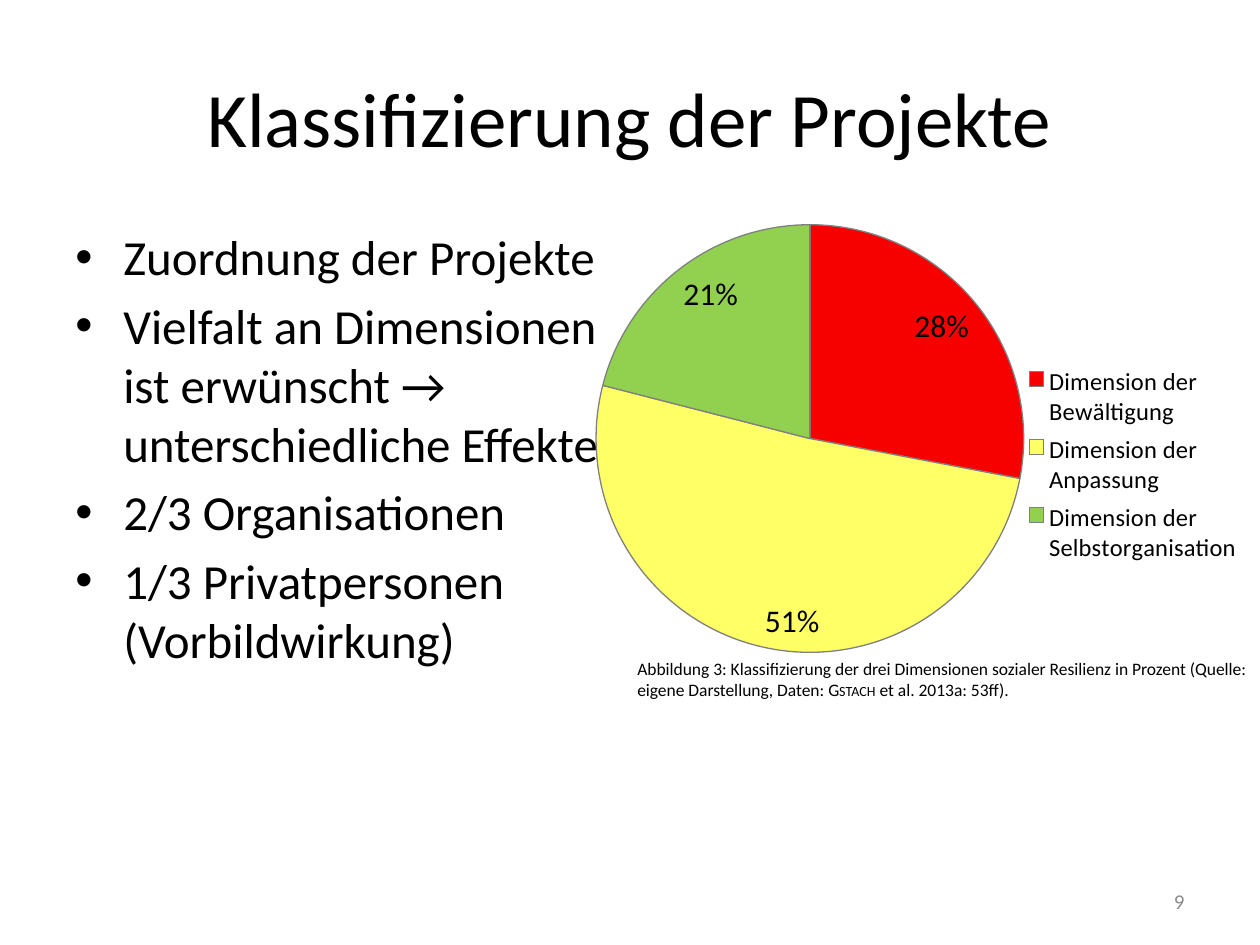
import pptx
import pptx.chart.data
import pptx.dml.color
import pptx.enum.chart
import pptx.enum.text
import pptx.oxml
import pptx.oxml.ns
import pptx.util
from pptx.util import Inches

FONT = "Calibri"
BULLETS = [
    "Zuordnung der Projekte",
    "Vielfalt an Dimensionen ist erwünscht → unterschiedliche Effekte",
    "2/3 Organisationen",
    "1/3 Privatpersonen (Vorbildwirkung)",
]
DIMENSIONS = [
    ("Dimension der Bewältigung", 0.28, "F60000"),
    ("Dimension der Anpassung", 0.51, "FFFF66"),
    ("Dimension der Selbstorganisation", 0.21, "92D050"),
]
CAPTION = [
    "Abbildung 3: Klassifizierung der drei Dimensionen sozialer Resilienz in Prozent "
    "(Quelle: eigene Darstellung, Daten: ",
    "Gstach",
    " et al. 2013a: 53ff).",
]


def rgb(color):
    """Turn a hex string into a colour."""
    return pptx.dml.color.RGBColor.from_string(color)


def style_font(font, size, color="000000"):
    """Set typeface, size and colour of a font."""
    font.name = FONT
    font.size = pptx.util.Pt(size)
    font.color.rgb = rgb(color)


def add_text_box(page, box):
    """Add a wrapping text box and return its text frame."""
    frame = page.shapes.add_textbox(*box).text_frame
    frame.word_wrap = True
    return frame


def place_title(page, box, text):
    """Move, fill and format the title placeholder."""
    title = page.shapes.title
    title.left, title.top, title.width, title.height = box
    title.text_frame.text = text
    title.text_frame.vertical_anchor = pptx.enum.text.MSO_ANCHOR.MIDDLE
    para = title.text_frame.paragraphs[0]
    para.alignment = pptx.enum.text.PP_ALIGN.CENTER
    style_font(para.runs[0].font, 44)


def add_bullets(page, box, items):
    """Add the bulleted list."""
    frame = add_text_box(page, box)
    frame.text = "\n".join(items)
    for para in frame.paragraphs:
        para.space_before = pptx.util.Pt(5.6)
        style_font(para.runs[0].font, 28)
        properties = para._p.get_or_add_pPr()
        properties.set("marL", str(Inches(0.38)))
        properties.set("indent", str(-Inches(0.38)))
        for tag, name, value in (("buFont", "typeface", "Arial"), ("buChar", "char", "•")):
            bullet = pptx.oxml.parse_xml(f'<a:{tag} {pptx.oxml.ns.nsdecls("a")} {name}="{value}"/>')
            properties.append(bullet)


def set_layout(parent, index, box, inner=False):
    """Place a chart part by fractions of the chart area."""
    for old in parent.findall(pptx.oxml.ns.qn("c:layout")):
        parent.remove(old)
    target = '<c:layoutTarget val="inner"/>' if inner else ""
    modes = "".join(f'<c:{side}Mode val="edge"/>' for side in "xy")
    sizes = "".join(f'<c:{side} val="{value}"/>' for side, value in zip("xywh", box))
    parent.insert(index, pptx.oxml.parse_xml(
        f'<c:layout {pptx.oxml.ns.nsdecls("c")}><c:manualLayout>'
        f"{target}{modes}{sizes}</c:manualLayout></c:layout>"))


def add_pie(page, box, dimensions):
    """Add the pie chart with its labels and legend."""
    names, shares, colors = zip(*dimensions)
    data = pptx.chart.data.CategoryChartData(number_format="0%")
    data.categories = names
    data.add_series("Series 1", shares)
    chart = page.shapes.add_chart(pptx.enum.chart.XL_CHART_TYPE.PIE, *box, data).chart
    chart.has_title = False
    style_font(chart.font, 10)

    plot = chart.plots[0]
    plot.vary_by_categories = True
    for index, color in enumerate(colors):
        slice_format = plot.series[0].points[index].format
        slice_format.fill.solid()
        slice_format.fill.fore_color.rgb = rgb(color)
        slice_format.line.color.rgb = rgb("808080")
        slice_format.line.width = pptx.util.Pt(0.75)

    plot.has_data_labels = True
    labels = plot.data_labels
    labels.show_value = True
    labels.show_percentage = False
    labels.number_format = "0%"
    labels.number_format_is_linked = False
    labels.position = pptx.enum.chart.XL_LABEL_POSITION.INSIDE_END
    style_font(labels.font, 18)

    chart.has_legend = True
    legend = chart.legend
    legend.position = pptx.enum.chart.XL_LEGEND_POSITION.RIGHT
    legend.include_in_layout = False
    style_font(legend.font, 14)
    set_layout(plot._element.getparent(), 0, (0.02, 0.13, 0.62, 0.73), inner=True)
    set_layout(legend._element, 1, (0.62, 0.36, 0.35, 0.36))


def add_caption(page, box, parts):
    """Add the caption with the author in small capitals."""
    para = add_text_box(page, box).paragraphs[0]
    for text in parts:
        span = para.add_run()
        span.text = text
        style_font(span.font, 10)
    para.runs[1].font._element.set("cap", "small")


def add_page_number(page, box, number):
    """Add the page number."""
    frame = add_text_box(page, box)
    frame.text = number
    frame.vertical_anchor = pptx.enum.text.MSO_ANCHOR.MIDDLE
    para = frame.paragraphs[0]
    para.alignment = pptx.enum.text.PP_ALIGN.RIGHT
    style_font(para.runs[0].font, 12, "8C8C8C")


def main():
    """Build the slide and save the deck."""
    deck = pptx.Presentation()
    deck.slide_width, deck.slide_height = Inches(10), Inches(7.5)
    page = deck.slides.add_slide(deck.slide_layouts[5])
    place_title(page, (Inches(0.5), Inches(0.3), Inches(9), Inches(1.25)), "Klassifizierung der Projekte")
    add_bullets(page, (Inches(0.5), Inches(1.75), Inches(4.42), Inches(4.95)), BULLETS)
    add_page_number(page, (Inches(7.17), Inches(6.95), Inches(2.33), Inches(0.4)), "9")
    add_pie(page, (Inches(4.61), Inches(1.18), Inches(5.51), Inches(4.65)), DIMENSIONS)
    add_caption(page, (Inches(4.96), Inches(5.17), Inches(5.04), Inches(0.44)), CAPTION)
    deck.save("out.pptx")


if __name__ == "__main__":
    main()
